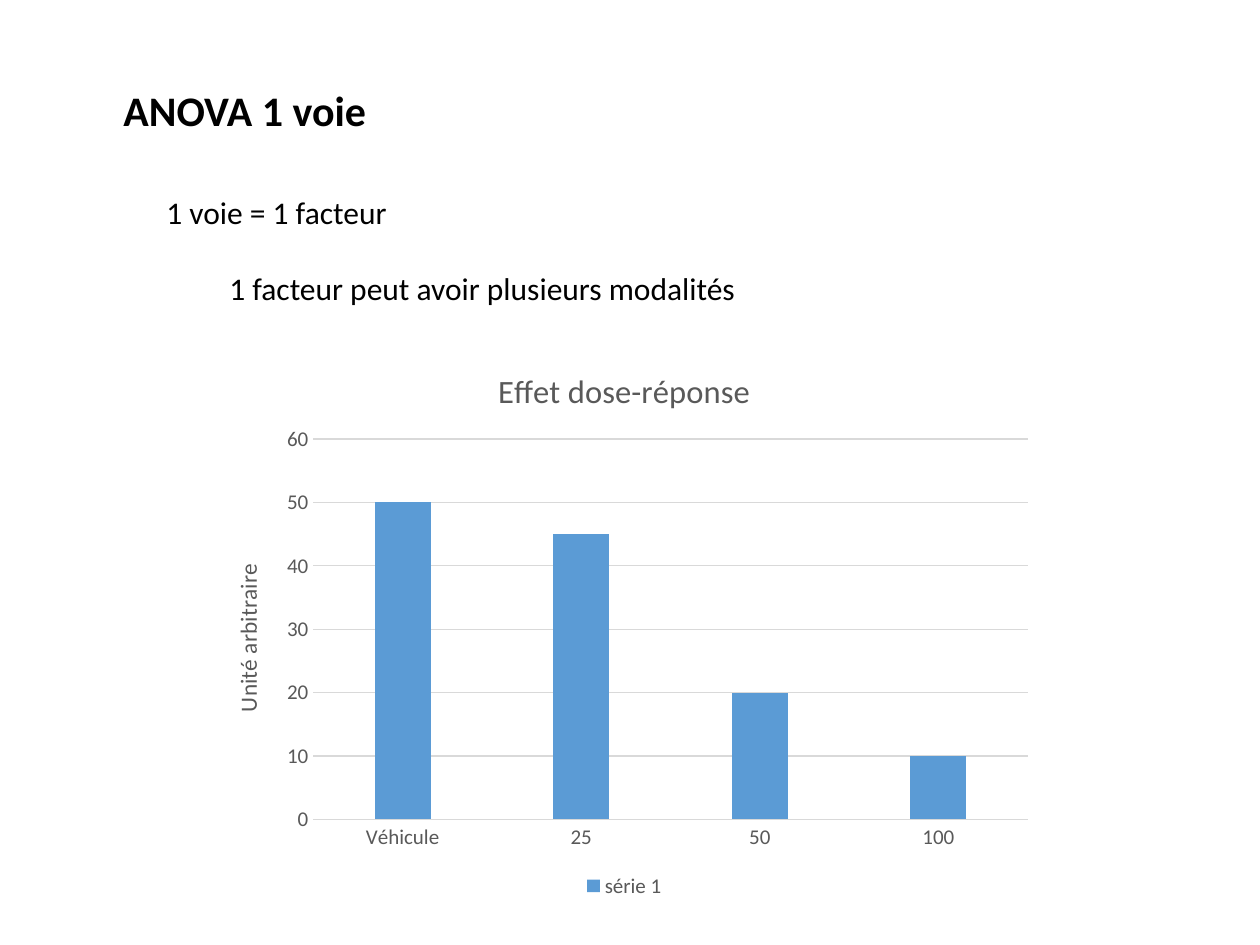
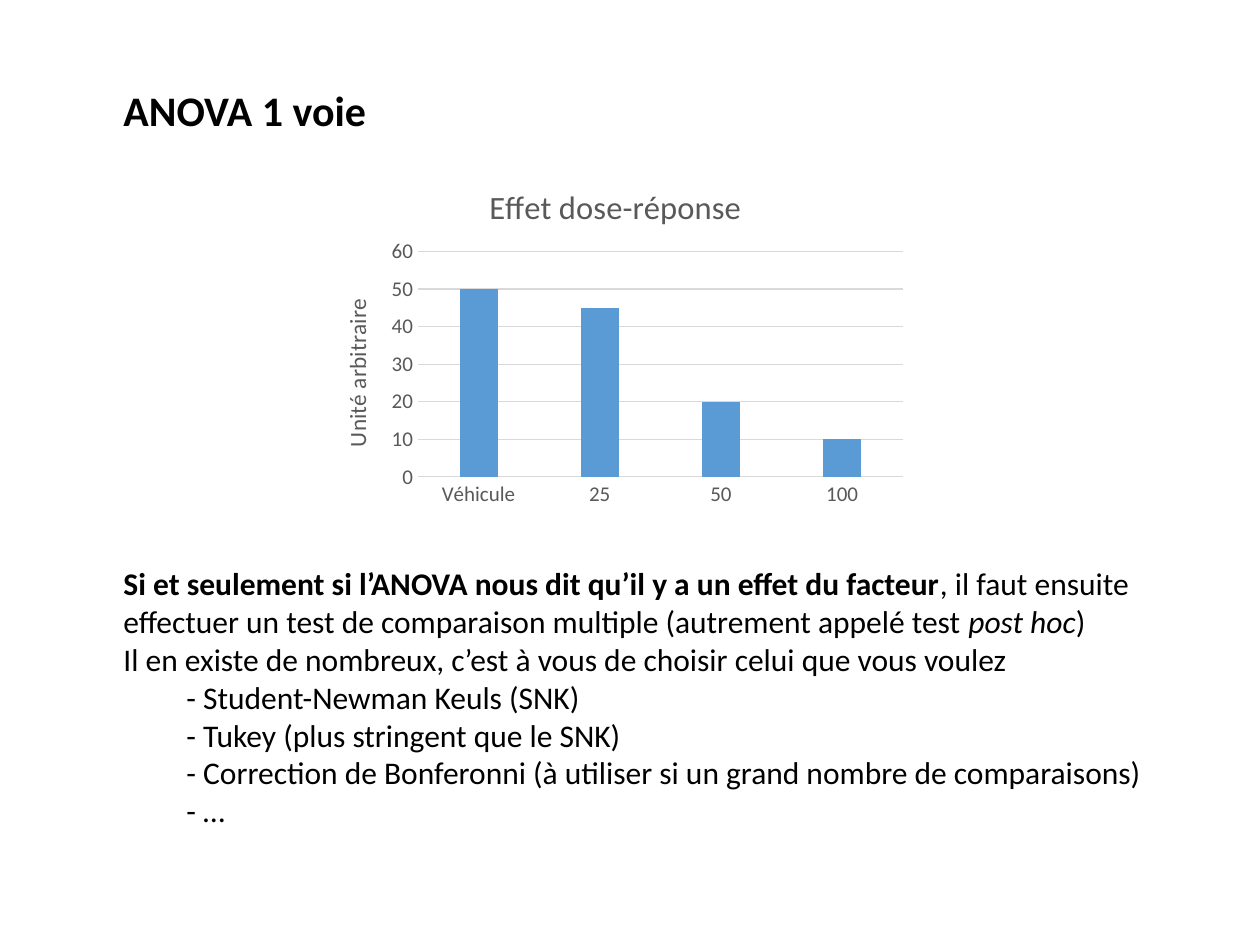
from lxml.etree import SubElement
from pptx import Presentation
from pptx.chart.data import CategoryChartData
from pptx.dml.color import RGBColor
from pptx.enum.chart import XL_CHART_TYPE, XL_LEGEND_POSITION, XL_TICK_MARK
from pptx.enum.text import MSO_ANCHOR, MSO_AUTO_SIZE, PP_ALIGN
from pptx.oxml import parse_xml
from pptx.oxml.ns import nsdecls, qn
from pptx.util import Pt

PX = 9144
FONT = "Calibri"
BLACK = RGBColor(0x00, 0x00, 0x00)
GREY = RGBColor(0x59, 0x59, 0x59)
GRID = RGBColor(0xD9, 0xD9, 0xD9)
BLUE = RGBColor(0x5B, 0x9B, 0xD5)
INDENT = 50

DOSES = ["Véhicule", "25", "50", "100"]
RESPONSES = [50, 45, 20, 10]


class Deck:
    def __init__(self, width, height):
        self.prs = Presentation()
        self.prs.slide_width = width * PX
        self.prs.slide_height = height * PX
        self.slide = None

    def style(self, font, size, color=BLACK, bold=False):
        font.name = FONT
        font.size = Pt(size)
        font.color.rgb = color
        font.bold = bold

    def place(self, sp, box):
        sp.left, sp.top, sp.width, sp.height = [v * PX for v in box]
        tf = sp.text_frame
        tf.auto_size = MSO_AUTO_SIZE.NONE
        tf.vertical_anchor = MSO_ANCHOR.TOP
        return tf

    def add_slide(self, title):
        self.slide = self.prs.slides.add_slide(self.prs.slide_layouts[1])
        tf = self.place(self.slide.shapes.title, (88, 62, 214, 50))
        tf.word_wrap = False
        tf.text = title
        p = tf.paragraphs[0]
        p.alignment = PP_ALIGN.LEFT
        self.style(p.font, 24, bold=True)

    def body(self, box, lines, gap=0):
        tf = self.place(self.slide.placeholders[1], box)
        tf.word_wrap = True
        for i, (level, runs) in enumerate(lines):
            p = tf.paragraphs[0] if i == 0 else tf.add_paragraph()
            p.space_before = Pt(gap if i else 0)
            self.style(p.font, 18)
            pPr = p._p.get_or_add_pPr()
            pPr.set("marL", str(level * INDENT * PX))
            pPr.set("indent", "0")
            pPr.insert_element_before(pPr.makeelement(qn("a:buNone")), "a:tabLst", "a:defRPr")
            for text, emphasis in runs:
                r = p.add_run()
                r.text = text
                if emphasis == "bold":
                    r.font.bold = True
                elif emphasis == "italic":
                    r.font.italic = True

    def chart_title(self, owner, text, size):
        owner.has_title = True
        title = owner.chart_title if hasattr(owner, "chart_title") else owner.axis_title
        title.text_frame.text = text
        self.style(title.text_frame.paragraphs[0].font, size, GREY)

    def plot_layout(self, chart, fractions):
        area = chart.element.find(".//" + qn("c:plotArea"))
        for old in area.findall(qn("c:layout")):
            area.remove(old)
        layout = parse_xml(f"<c:layout {nsdecls('c')}/>")
        manual = SubElement(layout, qn("c:manualLayout"))
        values = [("layoutTarget", "inner"), ("xMode", "edge"), ("yMode", "edge")]
        for tag, val in values + list(zip("xywh", fractions)):
            SubElement(manual, qn(f"c:{tag}")).set("val", str(val))
        area.insert(0, layout)

    def column_chart(self, box, plot_box, series_name, legend=False):
        data = CategoryChartData()
        data.categories = DOSES
        data.add_series(series_name, RESPONSES)
        frame = self.slide.shapes.add_chart(
            XL_CHART_TYPE.COLUMN_CLUSTERED, *[v * PX for v in box], data)
        chart = frame.chart
        self.style(chart.font, 12, GREY)
        self.chart_title(chart, "Effet dose-réponse", 18.6)
        chart.has_legend = legend
        if legend:
            chart.legend.position = XL_LEGEND_POSITION.BOTTOM
            chart.legend.include_in_layout = False
            self.style(chart.legend.font, 12, GREY)

        plot = chart.plots[0]
        plot.gap_width = 219
        plot.overlap = -27
        plot.vary_by_categories = False
        fill = plot.series[0].format.fill
        fill.solid()
        fill.fore_color.rgb = BLUE

        cat, val = chart.category_axis, chart.value_axis
        for axis in (cat, val):
            axis.major_tick_mark = XL_TICK_MARK.NONE
            axis.minor_tick_mark = XL_TICK_MARK.NONE
            self.style(axis.tick_labels.font, 12, GREY)
        self.chart_title(val, "Unité arbitraire", 13.3)
        val.minimum_scale, val.maximum_scale, val.major_unit = 0, 60, 10
        val.format.line.fill.background()
        for line in (cat.format.line, val.major_gridlines.format.line):
            line.color.rgb = GRID
            line.width = Pt(0.75)
        self.plot_layout(chart, plot_box)


def main():
    deck = Deck(1000, 750)

    deck.add_slide("ANOVA 1 voie")
    deck.body((122, 148, 477, 101), [
        (0, [("1 voie = 1 facteur", None)]),
        (1, [("1 facteur peut avoir plusieurs modalités", None)]),
    ], gap=22)
    deck.column_chart((162, 273, 667, 444), (0.13, 0.17, 0.85, 0.68), "série 1", legend=True)

    deck.add_slide("ANOVA 1 voie")
    deck.column_chart((251, 131, 475, 275), (0.17, 0.25, 0.81, 0.65), "Series 1")
    tests = ["Student-Newman Keuls (SNK)", "Tukey (plus stringent que le SNK)",
             "Correction de Bonferonni (à utiliser si un grand nombre de comparaisons)", "…"]
    deck.body((88, 443, 905, 222), [
        (0, [("Si et seulement si l’ANOVA nous dit qu’il y a un effet du facteur", "bold"),
             (", il faut ensuite effectuer un test de comparaison multiple "
              "(autrement appelé test ", None),
             ("post hoc", "italic"), (")", None)]),
        (0, [("Il en existe de nombreux, c’est à vous de choisir celui que vous voulez", None)]),
        *[(1, [(f"- {test}", None)]) for test in tests],
    ])

    deck.prs.save("out.pptx")


if __name__ == "__main__":
    main()
